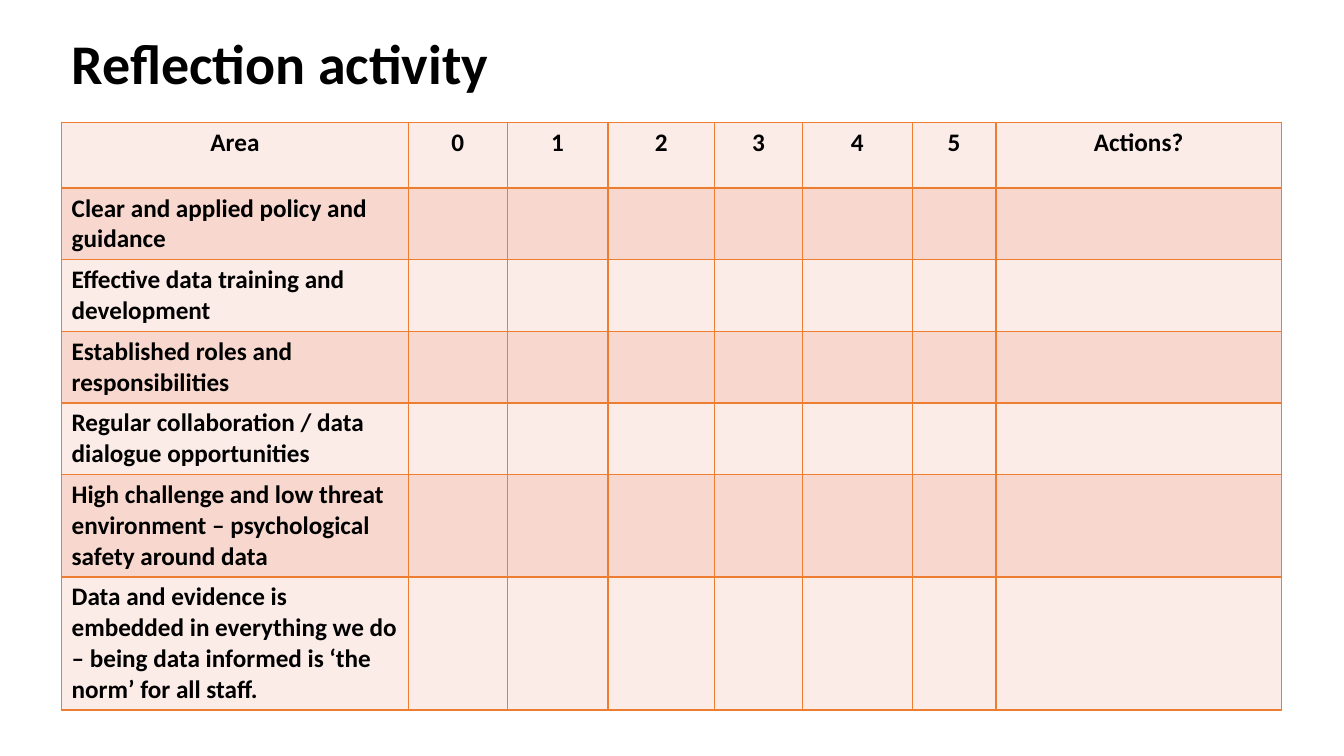
import pptx
import pptx.dml.color
import pptx.enum.text
import pptx.oxml
import pptx.oxml.ns
import pptx.util

Pt = pptx.util.Pt
ALIGN = pptx.enum.text.PP_ALIGN

HEADERS = ["Area", "0", "1", "2", "3", "4", "5", "Actions?"]
AREAS = [
    "Clear and applied policy and guidance",
    "Effective data training and development",
    "Established roles and responsibilities",
    "Regular collaboration / data dialogue opportunities",
    "High challenge and low threat environment – psychological safety around data",
    "Data and evidence is embedded in everything we do – being data informed is ‘the norm’ for all staff.",
]
COLUMN_WIDTHS = [247.7, 70.6, 72, 76.3, 62.6, 78.5, 59.8, 203.8]
ROW_HEIGHT = 46.8
ROW_FILLS = ["FCECE8", "F8D7CE"]
BORDER_COLOR = "ED7D31"


def color(hex_string):
    return pptx.dml.color.RGBColor.from_string(hex_string)


def add_bold_run(paragraph, text, size):
    run = paragraph.add_run()
    run.text = text
    run.font.name = "Calibri"
    run.font.size = Pt(size)
    run.font.bold = True
    run.font.color.rgb = color("000000")


presentation = pptx.Presentation()
presentation.slide_width = Pt(960)
presentation.slide_height = Pt(540)
slide = presentation.slides.add_slide(presentation.slide_layouts[5])

# Title
title = slide.shapes.title
title.left, title.top, title.width, title.height = Pt(44), Pt(17.3), Pt(828), Pt(59.8)
title.text_frame.vertical_anchor = pptx.enum.text.MSO_ANCHOR.MIDDLE
title_paragraph = title.text_frame.paragraphs[0]
title_paragraph.alignment = ALIGN.LEFT
title_paragraph.line_spacing = 0.9
add_bold_run(title_paragraph, "Reflection activity", 40)

# Table grid
rows = [HEADERS] + [[area] + [""] * (len(HEADERS) - 1) for area in AREAS]
table = slide.shapes.add_table(
    len(rows), len(HEADERS), Pt(44), Pt(87.5),
    Pt(sum(COLUMN_WIDTHS)), Pt(ROW_HEIGHT * len(rows))).table
for column, width in zip(table.columns, COLUMN_WIDTHS):
    column.width = Pt(width)
for row in table.rows:
    row.height = Pt(ROW_HEIGHT)

# Cells: banded fill, text and borders
for row_index, texts in enumerate(rows):
    for column_index, text in enumerate(texts):
        cell = table.cell(row_index, column_index)
        cell.fill.solid()
        cell.fill.fore_color.rgb = color(ROW_FILLS[row_index % 2])
        paragraph = cell.text_frame.paragraphs[0]
        paragraph.alignment = ALIGN.CENTER if row_index == 0 else ALIGN.LEFT
        if text:
            add_bold_run(paragraph, text, 18)
        cell_properties = cell._tc.get_or_add_tcPr()
        for position, side in enumerate(["lnL", "lnR", "lnT", "lnB"]):
            border = pptx.oxml.parse_xml(
                f'<a:{side} {pptx.oxml.ns.nsdecls("a")} w="{Pt(1)}"><a:solidFill>'
                f'<a:srgbClr val="{BORDER_COLOR}"/></a:solidFill></a:{side}>')
            cell_properties.insert(position, border)

presentation.save("out.pptx")
